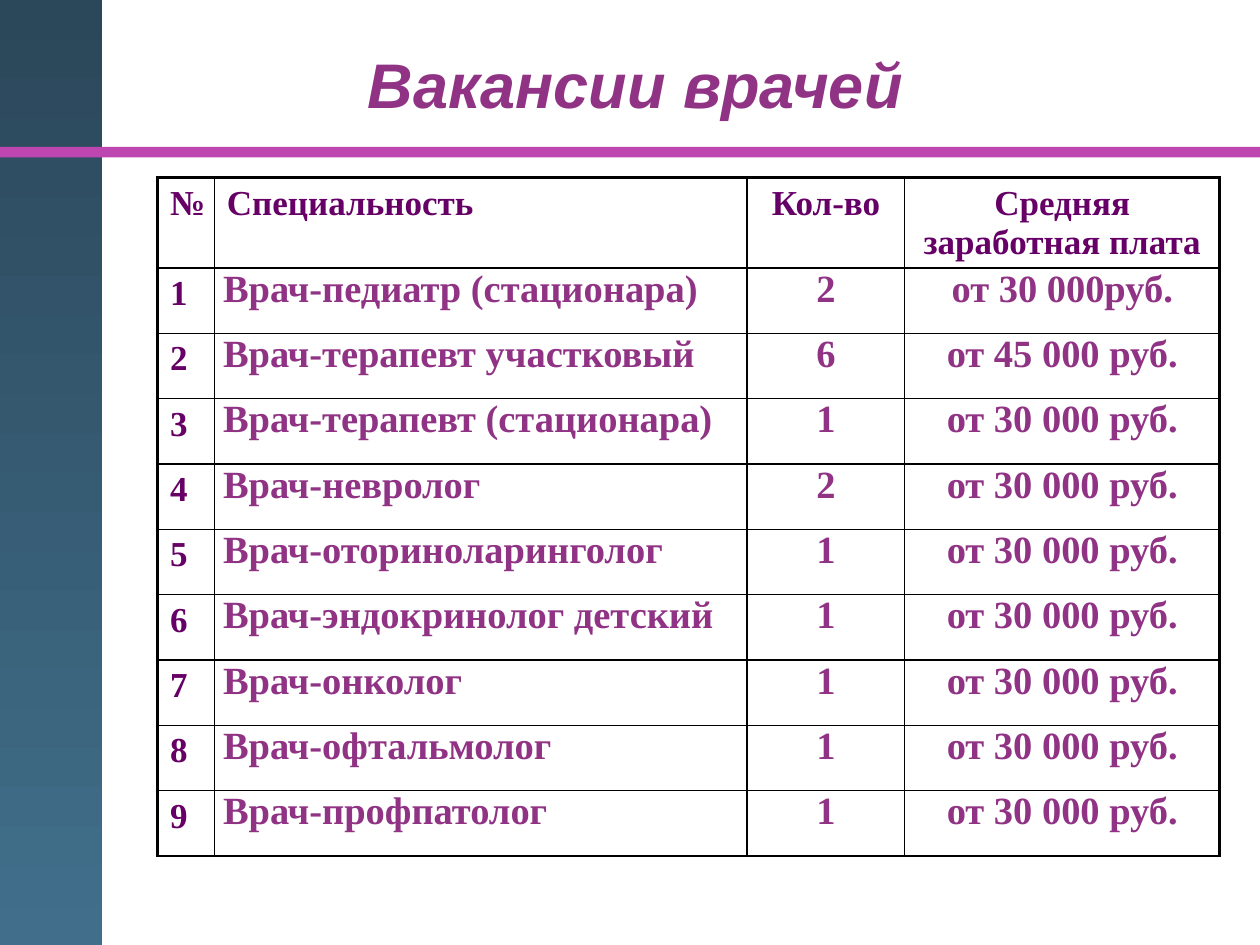
from lxml.etree import SubElement
from pptx import Presentation
from pptx.dml.color import RGBColor
from pptx.enum.shapes import MSO_SHAPE
from pptx.enum.text import MSO_ANCHOR, PP_ALIGN
from pptx.oxml.ns import qn
from pptx.util import Pt

# Content
TITLE = "Вакансии врачей"
HEAD = ("№", "Специальность", "Кол-во", "Средняя заработная плата")
JOBS = [
    ("Врач-педиатр (стационара)", "2", "от 30 000руб."),
    ("Врач-терапевт участковый", "6", "от 45 000 руб."),
    ("Врач-терапевт (стационара)", "1", "от 30 000 руб."),
    ("Врач-невролог", "2", "от 30 000 руб."),
    ("Врач-оториноларинголог", "1", "от 30 000 руб."),
    ("Врач-эндокринолог детский", "1", "от 30 000 руб."),
    ("Врач-онколог", "1", "от 30 000 руб."),
    ("Врач-офтальмолог", "1", "от 30 000 руб."),
    ("Врач-профпатолог", "1", "от 30 000 руб."),
]
ROWS = [HEAD] + [(str(n), *job) for n, job in enumerate(JOBS, 1)]

# Look
PLUM, DARK, PINK = "903385", "660066", "BE46B0"
COLS = (32.5, 304.5, 90, 180)
HEAD_H, ROW_H = 51, 37.35
THICK, THIN = 2.25, 1


def color(code):
    return RGBColor.from_string(code)


def style(par, font, size, code, align):
    par.alignment = align
    for run in par.runs:
        run.font.name, run.font.size, run.font.bold = font, Pt(size), True
        run.font.color.rgb = color(code)


def bar(slide, x, y, w, h):
    shape = slide.shapes.add_shape(MSO_SHAPE.RECTANGLE, Pt(x), Pt(y), Pt(w), Pt(h))
    shape.shadow.inherit = False
    shape.line.fill.background()
    return shape


def border(cell, side, width):
    line = SubElement(cell._tc.get_or_add_tcPr(), qn("a:ln" + side), w=str(Pt(width)))
    fill = SubElement(line, qn("a:solidFill"))
    SubElement(fill, qn("a:srgbClr"), val="000000")


deck = Presentation()
deck.slide_width, deck.slide_height = Pt(720), Pt(540)
slide = deck.slides.add_slide(deck.slide_layouts[5])

# Side band and rule
band = bar(slide, 0, 0, 58.3, 540)
band.fill.gradient()
band.fill.gradient_angle = 270
for stop, code, pos in zip(band.fill.gradient_stops, ("2B475A", "416F8B"), (0, 1)):
    stop.color.rgb, stop.position = color(code), pos
rule = bar(slide, 0, 84, 720, 6)
rule.fill.solid()
rule.fill.fore_color.rgb = color(PINK)

# Title, brought in front of the band
title = slide.shapes.title
title.left, title.top, title.width, title.height = Pt(42.5), Pt(16.5), Pt(641), Pt(62)
title.text_frame.text = TITLE
title.text_frame.vertical_anchor = MSO_ANCHOR.MIDDLE
style(title.text_frame.paragraphs[0], "Arial", 36, PLUM, PP_ALIGN.CENTER)
title.text_frame.paragraphs[0].runs[0].font.italic = True
slide.shapes.element.append(title.element)

# Table of vacancies
high = HEAD_H + ROW_H * len(JOBS)
table = slide.shapes.add_table(len(ROWS), len(COLS), Pt(90), Pt(101.5),
                               Pt(sum(COLS)), Pt(high)).table
table.first_row = table.horz_banding = False
for col, wide in zip(table.columns, COLS):
    col.width = Pt(wide)
for r, row in enumerate(ROWS):
    table.rows[r].height = Pt(ROW_H if r else HEAD_H)
    for c, text in enumerate(row):
        cell = table.cell(r, c)
        cell.text_frame.text = text
        job = r > 0 and c > 0
        if job:
            cell.margin_left = cell.margin_right = Pt(5)
            cell.margin_top = cell.margin_bottom = 0
        align = PP_ALIGN.CENTER if c > 1 else PP_ALIGN.LEFT
        style(cell.text_frame.paragraphs[0], "Times New Roman",
              22 if job else 20, PLUM if job else DARK, align)
        border(cell, "L", THIN if c else THICK)
        border(cell, "R", THICK if c == len(COLS) - 1 else THIN)
        border(cell, "T", THIN if r else THICK)
        border(cell, "B", THIN)
        cell.fill.background()

deck.save("out.pptx")
